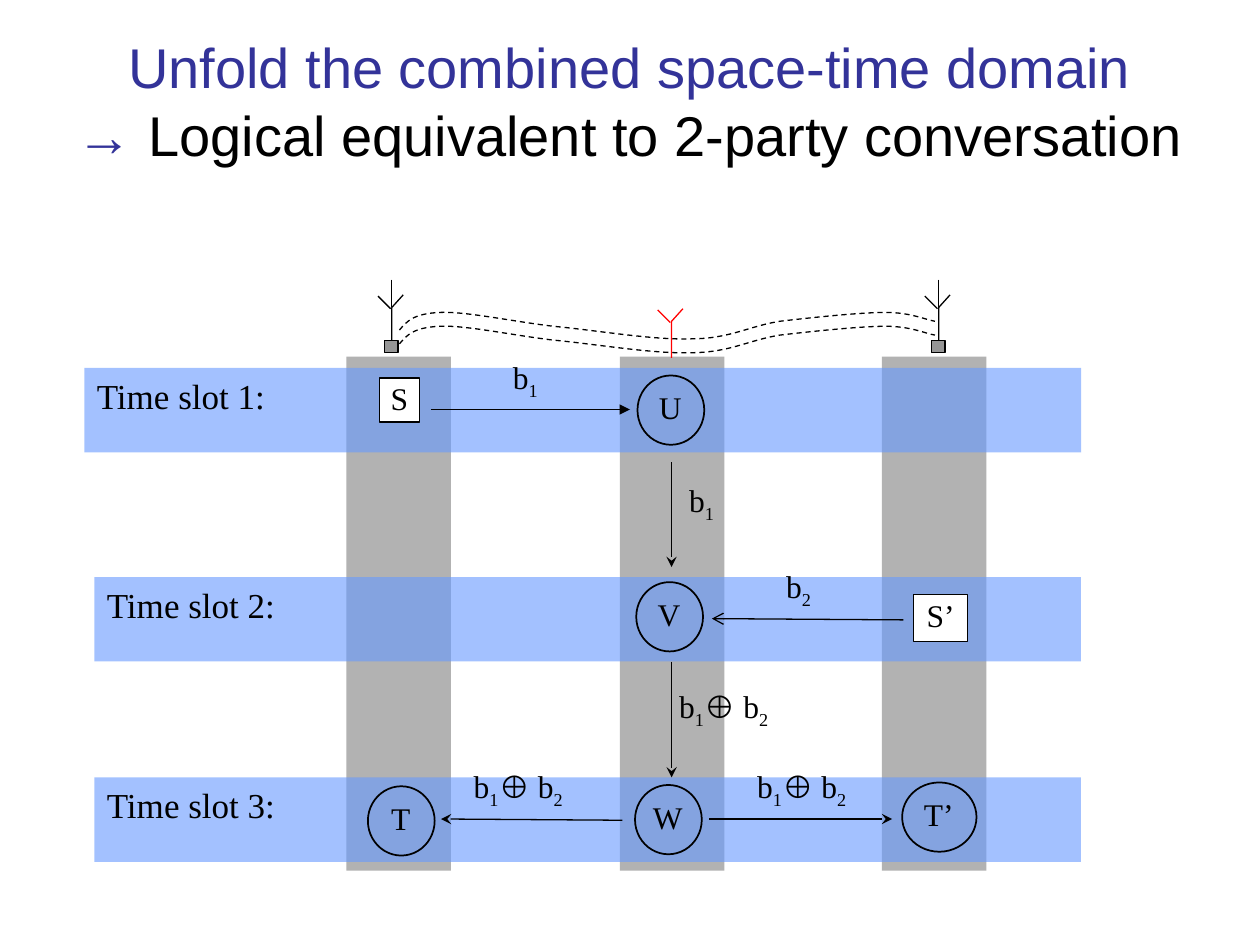
from dataclasses import dataclass
from lxml.etree import SubElement
from pptx import Presentation
from pptx.dml.color import RGBColor
from pptx.enum.dml import MSO_LINE
from pptx.enum.shapes import MSO_CONNECTOR, MSO_SHAPE
from pptx.enum.text import MSO_ANCHOR, PP_ALIGN
from pptx.oxml.ns import qn
from pptx.util import Inches, Pt


@dataclass(frozen=True)
class Theme:
    """Colours, fonts and sizes of the slide."""
    title: str = "333399"
    ink: str = "000000"
    place: str = "B2B2B2"
    slot: str = "6699FF"
    device: str = "969696"
    paper: str = "FFFFFF"
    relay: str = "FF0000"
    title_font: str = "Arial"
    body_font: str = "Times New Roman"
    title_size: int = 32
    slot_size: int = 20
    label_size: int = 18
    thin: float = 0.75
    ring: float = 1


THEME = Theme()


def rgb(colour):
    """Turn a hex string into a colour."""
    return RGBColor.from_string(colour)


def set_line(line, colour=THEME.ink, width=THEME.thin):
    """Colour and size an outline."""
    line.color.rgb = rgb(colour)
    line.width = Pt(width)


def set_text(sp, parts, size=THEME.label_size, inset=0.01, align=PP_ALIGN.LEFT):
    """Write text whose every second part is a subscript."""
    tf = sp.text_frame
    tf.word_wrap = True
    tf.vertical_anchor = MSO_ANCHOR.TOP
    if inset is not None:
        tf.margin_left = tf.margin_right = Inches(inset)
        tf.margin_top = tf.margin_bottom = Inches(inset)
    p = tf.paragraphs[0]
    p.alignment = align
    p.font.name, p.font.size = THEME.body_font, Pt(size)
    p.font.color.rgb = rgb(THEME.ink)
    for i, part in enumerate(parts):
        r = p.add_run()
        r.text = part
        if i % 2:
            r.font._element.set("baseline", "-25000")


def add_box(shapes, box, fill=None, outline=None, kind=MSO_SHAPE.RECTANGLE):
    """Add a flat preset shape."""
    sp = shapes.add_shape(kind, *map(Inches, box))
    sp.shadow.inherit = False
    if fill:
        sp.fill.solid()
        sp.fill.fore_color.rgb = rgb(fill)
    else:
        sp.fill.background()
    if outline:
        set_line(sp.line, width=outline)
    else:
        sp.line.fill.background()
    return sp


def add_title(s, first, arrow, second):
    """Fill the title placeholder with its two lines."""
    sp = s.shapes.title
    sp.left, sp.top, sp.width, sp.height = map(Inches, (0.25, 0.17, 9.5, 1.25))
    tf = sp.text_frame
    tf.word_wrap = True
    tf.vertical_anchor = MSO_ANCHOR.MIDDLE
    p = tf.paragraphs[0]
    p.alignment = PP_ALIGN.CENTER
    p.font.name, p.font.size = THEME.title_font, Pt(THEME.title_size)
    p.add_run().text = first
    p.add_line_break()
    p.add_run().text = arrow
    p.add_run().text = second
    for r, colour in zip(p.runs, (THEME.title, THEME.title, THEME.ink)):
        r.font.color.rgb = rgb(colour)


def add_slot(s, left, top, text):
    """Add a translucent time slot band ending at the common right edge."""
    sp = add_box(s.shapes, (left, top, 8.58 - left, 0.67), THEME.slot)
    colour = sp._element.spPr.find(qn("a:solidFill"))[0]
    SubElement(colour, qn("a:alpha"), val="60000")
    set_text(sp, [text], THEME.slot_size, None)


def add_label(s, box, parts, align=PP_ALIGN.LEFT):
    """Add a label that may hold subscripts."""
    set_text(s.shapes.add_textbox(*map(Inches, box)), parts, align=align)


def add_source(s, box, text):
    """Add a sending node as a named square."""
    sp = add_box(s.shapes, box, THEME.paper, THEME.thin)
    set_text(sp, [text], align=PP_ALIGN.CENTER)


def add_node(s, left, top, width, text):
    """Add a receiving node as a ring around its name."""
    add_box(s.shapes, (left, top, width, 0.55), None, THEME.ring, MSO_SHAPE.OVAL)
    add_label(s, (left + 0.1, top + 0.09, width - 0.21, 0.34), [text], PP_ALIGN.CENTER)


def add_line(shapes, start, end, colour=THEME.ink, arrow=None):
    """Add a straight line, with an arrowhead at its end if asked."""
    c = shapes.add_connector(MSO_CONNECTOR.STRAIGHT, *map(Inches, (*start, *end)))
    set_line(c.line, colour)
    if arrow:
        SubElement(c.line._get_or_add_ln(), qn("a:tailEnd"), type=arrow)
    SubElement(c._element.spPr, qn("a:effectLst"))


def add_path(shapes, points, colour=THEME.ink):
    """Add an open, unfilled outline."""
    start, *rest = [tuple(map(Inches, point)) for point in points]
    builder = shapes.build_freeform(*start)
    builder.add_line_segments(rest, close=False)
    sp = builder.convert_to_shape()
    sp.shadow.inherit = False
    sp.fill.background()
    set_line(sp.line, colour)
    return sp


def add_antenna(s, x, y, colour=THEME.ink, device=True):
    """Add an antenna as a group, with mast and device if it has one."""
    shapes = s.shapes.add_group_shape().shapes
    add_line(shapes, (x - 0.11, y + 0.13), (x - 0.01, y + 0.23), colour)
    add_path(shapes, [(x + 0.09, y + 0.12), (x, y + 0.22), (x, y + 0.51)], colour)
    if device:
        add_line(shapes, (x, y), (x, y + 0.22), colour)
        add_box(shapes, (x - 0.06, y + 0.48, 0.11, 0.1), THEME.device, THEME.thin)


def add_wave(s, dy):
    """Add a dashed radio path of cubic curves, lowered by dy."""
    knots = [(3.17, 2.62), (3.23, 2.55), (3.28, 2.49), (3.49, 2.48), (3.69, 2.47),
             (4.06, 2.55), (4.39, 2.59), (4.72, 2.62), (5.18, 2.7), (5.48, 2.69),
             (5.79, 2.69), (5.94, 2.59), (6.19, 2.55), (6.45, 2.52), (6.83, 2.48),
             (7.03, 2.48), (7.23, 2.48), (7.35, 2.54), (7.42, 2.55)]
    sp = add_path(s.shapes, [(x, y + dy) for x, y in knots])
    sp.line.dash_style = MSO_LINE.DASH
    outline = next(sp._element.iter(qn("a:path")))
    lines = outline.findall(qn("a:lnTo"))
    for i in range(0, len(lines), 3):
        curve = SubElement(outline, qn("a:cubicBezTo"))
        for line in lines[i:i + 3]:
            curve.append(line[0])
            outline.remove(line)


def main():
    """Build the space-time diagram and save it."""
    prs = Presentation()
    prs.slide_width, prs.slide_height = Inches(10), Inches(7.5)
    s = prs.slides.add_slide(prs.slide_layouts[5])
    for left in (2.75, 4.92, 7):
        add_box(s.shapes, (left, 2.83, 0.83, 4.08), THEME.place)
    add_title(s, "Unfold the combined space-time domain", "→ ",
              "Logical equivalent to 2-party conversation")
    add_antenna(s, 7.45, 2.22)
    add_antenna(s, 5.33, 2.33, THEME.relay, device=False)
    add_antenna(s, 3.11, 2.22)
    for dy in (0, 0.11):
        add_wave(s, dy)
    for i, (left, top) in enumerate([(0.67, 2.92), (0.75, 4.58), (0.75, 6.17)], 1):
        add_slot(s, left, top, f"Time slot {i}:")
    add_source(s, (3.01, 3, 0.32, 0.35), "S")
    add_source(s, (7.25, 4.72, 0.43, 0.37), "S’")
    for left, top, width, text in [(5.06, 2.98, 0.53, "U"), (5.05, 4.62, 0.53, "V"),
                                   (2.92, 6.24, 0.53, "T"), (5.04, 6.23, 0.53, "W"),
                                   (7.16, 6.21, 0.59, "T’")]:
        add_node(s, left, top, width, text)
    for start, end, arrow in [((3.42, 3.25), (5, 3.25), "triangle"),
                              ((5.33, 3.67), (5.33, 4.5), "stealth"),
                              ((7.17, 4.92), (5.65, 4.91), "arrow"),
                              ((5.33, 5.25), (5.33, 6.17), "stealth"),
                              ((4.94, 6.51), (3.5, 6.5), "stealth"),
                              ((5.63, 6.5), (7.08, 6.5), "stealth")]:
        add_line(s.shapes, start, end, arrow=arrow)
    b1, b2, both = ("b", "1"), ("b", "2"), ("b", "1", "⊕ b", "2")
    for left, top, parts in [(4.06, 2.83, b1), (5.46, 3.81, b1), (6.23, 4.49, b2)]:
        add_label(s, (left, top, 0.39, 0.35), parts)
    for left, top in [(5.38, 5.44), (3.75, 6.08), (6, 6.08)]:
        add_label(s, (left, top, 0.87, 0.4), both)
    prs.save("out.pptx")


if __name__ == "__main__":
    main()
